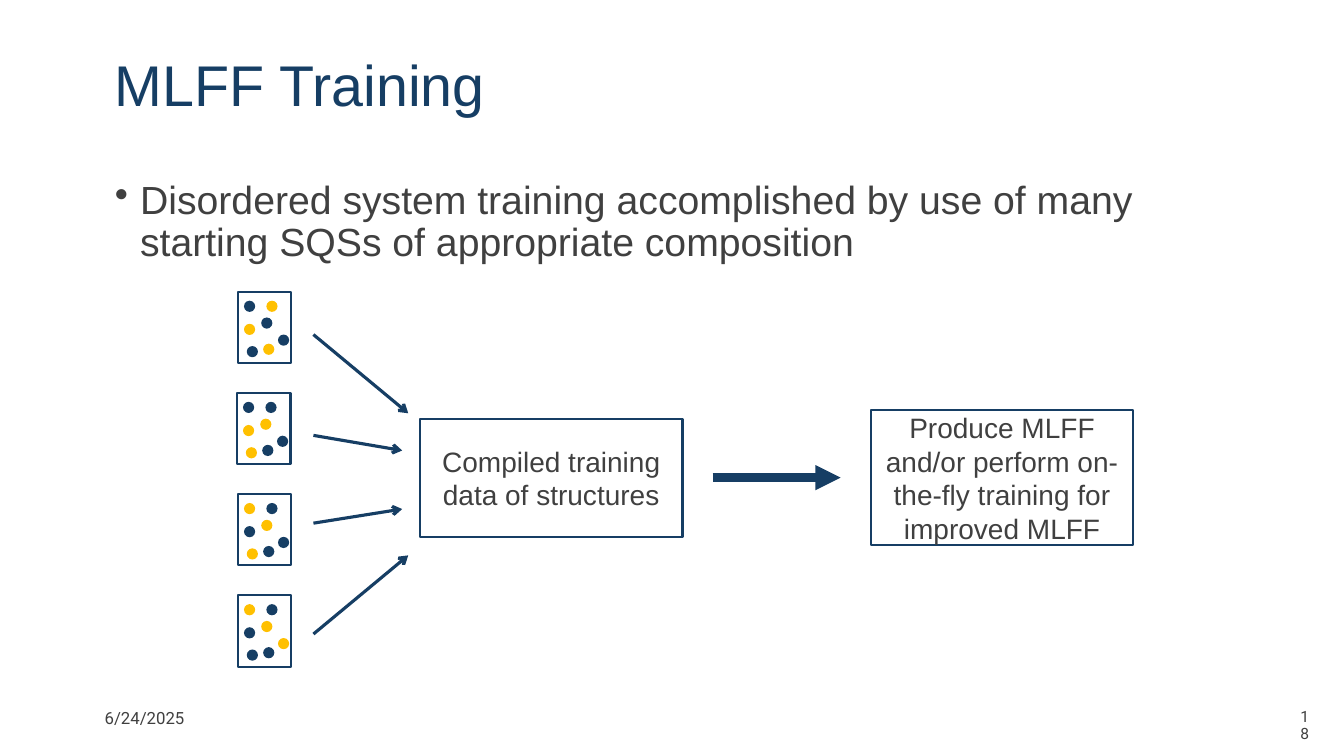
from dataclasses import dataclass

import pptx
import pptx.dml.color
import pptx.enum.shapes
import pptx.enum.text
import pptx.oxml
import pptx.oxml.ns
import pptx.util

Pt = pptx.util.Pt
SHAPE = pptx.enum.shapes.MSO_SHAPE
ALIGN = pptx.enum.text.PP_ALIGN
ANCHOR = pptx.enum.text.MSO_ANCHOR


@dataclass(frozen=True)
class Theme:
    navy: str = "163E64"
    gold: str = "FFC000"
    ink: str = "404040"
    paper: str = "FFFFFF"
    font: str = "Arial"
    footer_font: str = "Roboto"
    title: float = 41
    body: float = 28
    label: float = 20
    date: float = 12
    number: float = 11.1
    outline: float = 1.5


class Painter:
    """Draws styled elements on the current slide."""

    def __init__(self, page, theme):
        self.page = page
        self.theme = theme

    def color(self, value):
        return pptx.dml.color.RGBColor.from_string(value)

    def span(self, para, text, size, color, font):
        span = para.add_run()
        span.text = text
        span.font.size = Pt(size)
        span.font.name = font
        span.font.color.rgb = self.color(color)

    def text(self, place, text, size, color=None, font=None, align=ALIGN.LEFT, top=3.6, bullet=False):
        box = self.page.shapes.add_textbox(*map(Pt, place))
        frame = box.text_frame
        frame.word_wrap = True
        frame.margin_top = Pt(top)
        para = frame.paragraphs[0]
        para.alignment = align
        para.line_spacing = 0.9
        if bullet:
            properties = para._p.get_or_add_pPr()
            properties.set("marL", str(Pt(18)))
            properties.set("indent", str(-Pt(18)))
            mark = pptx.oxml.parse_xml(f'<a:buChar {pptx.oxml.ns.nsdecls("a")} char="•"/>')
            properties.append(mark)
        self.span(para, text, size, color or self.theme.ink, font or self.theme.font)

    def shape(self, place, kind=SHAPE.RECTANGLE, fill=None, line=None, parent=None):
        shape = (parent or self.page).shapes.add_shape(kind, *map(Pt, place))
        shape.shadow.inherit = False
        if fill:
            shape.fill.solid()
            shape.fill.fore_color.rgb = self.color(fill)
        else:
            shape.fill.background()
        if line:
            shape.line.color.rgb = self.color(line)
            shape.line.width = Pt(self.theme.outline)
        else:
            shape.line.fill.background()
        return shape

    def step(self, place, text):
        box = self.shape(place, line=self.theme.navy)
        frame = box.text_frame
        frame.word_wrap = True
        frame.vertical_anchor = ANCHOR.MIDDLE
        para = frame.paragraphs[0]
        para.alignment = ALIGN.CENTER
        self.span(para, text, self.theme.label, self.theme.ink, self.theme.font)

    def structure(self, left, top, atoms):
        group = self.page.shapes.add_group_shape()
        self.shape((left, top, 38.2, 51.1), fill=self.theme.paper, line=self.theme.navy, parent=group)
        for (x, y), atom in zip(ATOM_SITES, atoms):
            fill = self.theme.navy if atom == "N" else self.theme.gold
            self.shape((left + x, top + y, 8, 8), SHAPE.OVAL, fill, parent=group)

    def arrow(self, start, end, width, head):
        straight = pptx.enum.shapes.MSO_CONNECTOR.STRAIGHT
        arrow = self.page.shapes.add_connector(straight, *map(Pt, start + end))
        arrow.line.color.rgb = self.color(self.theme.navy)
        arrow.line.width = Pt(width)
        namespace = pptx.oxml.ns.nsdecls("a")
        properties = arrow._element.spPr
        outline = properties.find(pptx.oxml.ns.qn("a:ln"))
        outline.append(pptx.oxml.parse_xml(f'<a:tailEnd {namespace} type="{head}"/>'))
        properties.append(pptx.oxml.parse_xml(f"<a:effectLst {namespace}/>"))


ATOM_SITES = [(4.3, 6.5), (16.6, 18.5), (28.6, 30.7), (6.3, 38.9), (4.3, 23), (20.3, 6.5), (18, 37.2)]
STRUCTURES = [(170, "NNNNGGG"), (169.3, "NGNGGNN"), (170, "GGNGNNN"), (170, "GGGNNNN")]
TRAINING_ARROWS = [(239, 291.6, 295.2), (311, 287.3, 321.8), (373.7, 287.3, 363.6), (452.9, 291.6, 396.7)]


def main():
    deck = pptx.Presentation()
    deck.slide_width, deck.slide_height = Pt(960), Pt(540)
    theme = Theme()
    painter = Painter(deck.slides.add_slide(deck.slide_layouts[6]), theme)

    painter.text((75, 33.8, 805, 64), "MLFF Training", theme.title, theme.navy, top=7)
    painter.text(
        (75, 125.3, 805, 73.4),
        "Disordered system training accomplished by use of many starting SQSs of appropriate composition",
        theme.body,
        bullet=True,
    )

    for row, (left, atoms) in enumerate(STRUCTURES):
        painter.structure(left, 208.3 + 72.25 * row, atoms)
    for start, x, y in TRAINING_ARROWS:
        painter.arrow((223.9, start), (x, y), 2.25, "arrow")

    painter.step((300, 299, 187.5, 84.4), "Compiled training data of structures")
    painter.arrow((509, 341.2), (600.5, 341.2), 6, "triangle")
    painter.step(
        (622, 293, 187.5, 96.5),
        "Produce MLFF and/or perform on-the-fly training for improved MLFF",
    )

    footer = {"font": theme.footer_font, "align": ALIGN.CENTER}
    painter.text((51.8, 503.3, 103, 20.2), "6/24/2025", theme.date, **footer)
    painter.text((918.7, 503.3, 26.6, 20.9), "18", theme.number, **footer)
    deck.save("out.pptx")


if __name__ == "__main__":
    main()
